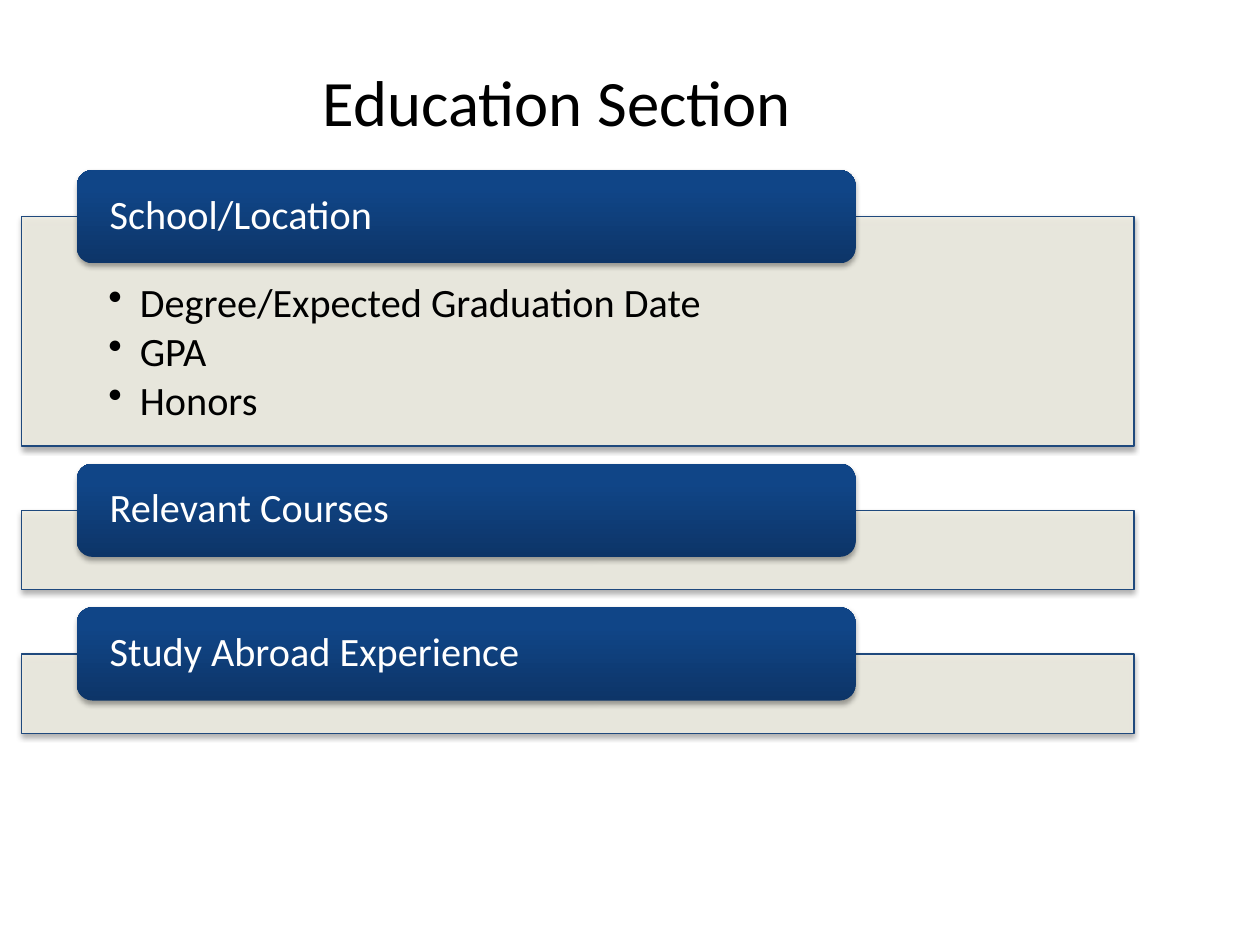
from dataclasses import dataclass

from lxml import etree
from pptx import Presentation
from pptx.dml.color import RGBColor
from pptx.enum.shapes import MSO_SHAPE
from pptx.enum.text import MSO_ANCHOR, MSO_AUTO_SIZE, PP_ALIGN
from pptx.oxml.ns import qn
from pptx.util import Emu, Inches, Pt

RECT, ROUND = MSO_SHAPE.RECTANGLE, MSO_SHAPE.ROUNDED_RECTANGLE
TOP, MIDDLE = MSO_ANCHOR.TOP, MSO_ANCHOR.MIDDLE
LEFT, CENTER = PP_ALIGN.LEFT, PP_ALIGN.CENTER
FIXED = MSO_AUTO_SIZE.NONE
COLS, ROWS = 1000, 750
UNIT = Inches(10) // COLS


@dataclass(frozen=True)
class Theme:
    """Colours, font and type sizes."""
    font: str = "Calibri"
    head: int = 37
    text: int = 23
    ink: str = "000000"
    light: str = "FFFFFF"
    panel: str = "EEECE1"
    edge: str = "1F497D"
    blend: tuple = ((0, "0D3568"), (80, "104587"), (100, "0E458A"))


THEME = Theme()
PARTS = [
    ("School/Location", 182, ["Degree/Expected Graduation Date", "GPA", "Honors"]),
    ("Relevant Courses", 63, []),
    ("Study Abroad Experience", 63, []),
]


def grid(*cells):
    """Turn grid cells into lengths."""
    return [Emu(cell * UNIT) for cell in cells]


def apply(item, form):
    """Set each attribute named in a dict."""
    for name, value in form.items():
        setattr(item, name, value)


def node(parent, tag, **attrs):
    """Add a drawing element with attributes."""
    child = etree.SubElement(parent, qn(f"a:{tag}"))
    for name, value in attrs.items():
        child.set(name, str(value))
    return child


def write(shape, lines, size, color, frame, para):
    """Write formatted lines into a shape and return its paragraphs."""
    text = shape.text_frame
    text.text = "\n".join(lines)
    apply(text, {"word_wrap": True, "auto_size": FIXED, **frame})
    for item in text.paragraphs:
        apply(item, para)
        font = item.runs[0].font
        apply(font, {"name": THEME.font, "size": Pt(size)})
        font.color.rgb = RGBColor.from_string(color)
    return text.paragraphs


def inset(left, top, right, low):
    """Give text margins in grid cells."""
    names = ("margin_left", "margin_top", "margin_right", "margin_bottom")
    return dict(zip(names, grid(left, top, right, low)))


def shade(shape):
    """Give a shape a soft shadow below it."""
    shape.shadow.inherit = False
    effect = shape._element.spPr.find(qn("a:effectLst"))
    outer = node(effect, "outerShdw", blurRad=Pt(3.1), dist=Pt(1.8),
                 dir=5400000, rotWithShape=0)
    node(node(outer, "srgbClr", val=THEME.ink), "alpha", val=35000)


def panel(slide, box, lines):
    """Draw a pale panel and its bullet list."""
    shape = slide.shapes.add_shape(RECT, *grid(*box))
    shape.fill.solid()
    shape.fill.fore_color.rgb = RGBColor.from_string(THEME.panel)
    color = shape._element.spPr.find(f"{qn('a:solidFill')}/{qn('a:srgbClr')}")
    node(color, "alpha", val=90000)
    shape.line.color.rgb = RGBColor.from_string(THEME.edge)
    shape.line.width = Pt(0.75)
    shade(shape)
    if lines:
        area = slide.shapes.add_textbox(*grid(*box))
        frame = {"vertical_anchor": TOP, **inset(69, 52, 69, 18)}
        para = {"level": 1, "alignment": LEFT, "line_spacing": 0.9,
                "space_after": Pt(3.2)}
        for item in write(area, lines, THEME.text, THEME.ink, frame, para):
            props = item._p.get_or_add_pPr()
            props.set("marL", str(Inches(0.25)))
            props.set("indent", str(Inches(-0.25)))
            node(props, "buChar", char="•")


def tab(slide, box, label):
    """Draw a blue rounded tab and its label."""
    shape = slide.shapes.add_shape(ROUND, *grid(*box))
    shape.fill.gradient()
    blend = shape._element.spPr.find(qn("a:gradFill"))
    for child in list(blend):
        blend.remove(child)
    stops = node(blend, "gsLst")
    for place, color in THEME.blend:
        node(node(stops, "gs", pos=place * 1000), "srgbClr", val=color)
    node(blend, "lin", ang=16200000, scaled=0)
    shape.line.fill.background()
    shade(shape)
    left, top, width, height = box
    area = slide.shapes.add_textbox(*grid(left + 3, top + 3, width - 7, height - 7))
    frame = {"vertical_anchor": MIDDLE, **inset(23, 0, 23, 0)}
    write(area, [label], THEME.text, THEME.light, frame,
          {"alignment": LEFT, "line_spacing": 0.9})


def stack(slide, box, parts, high=74, gap=14):
    """Stack tabbed panels downward from the top of a box."""
    left, top, width = box
    for label, depth, lines in parts:
        start = top + high // 2
        panel(slide, (left, start, width, depth), lines)
        tab(slide, (left + width // 20, top, width * 7 // 10, high), label)
        top = start + depth + gap


def title(slide, box, words):
    """Place and format the slide title."""
    shape = slide.shapes.title
    apply(shape, dict(zip(("left", "top", "width", "height"), grid(*box))))
    write(shape, [words], THEME.head, THEME.ink,
          {"vertical_anchor": MIDDLE}, {"alignment": CENTER})


def main():
    """Build and save the slide."""
    deck = Presentation()
    deck.slide_width, deck.slide_height = grid(COLS, ROWS)
    slide = deck.slides.add_slide(deck.slide_layouts[5])
    title(slide, (17, 17, 850, 125), "Education Section")
    stack(slide, (17, 135, 883), PARTS)
    deck.save("out.pptx")


if __name__ == "__main__":
    main()
